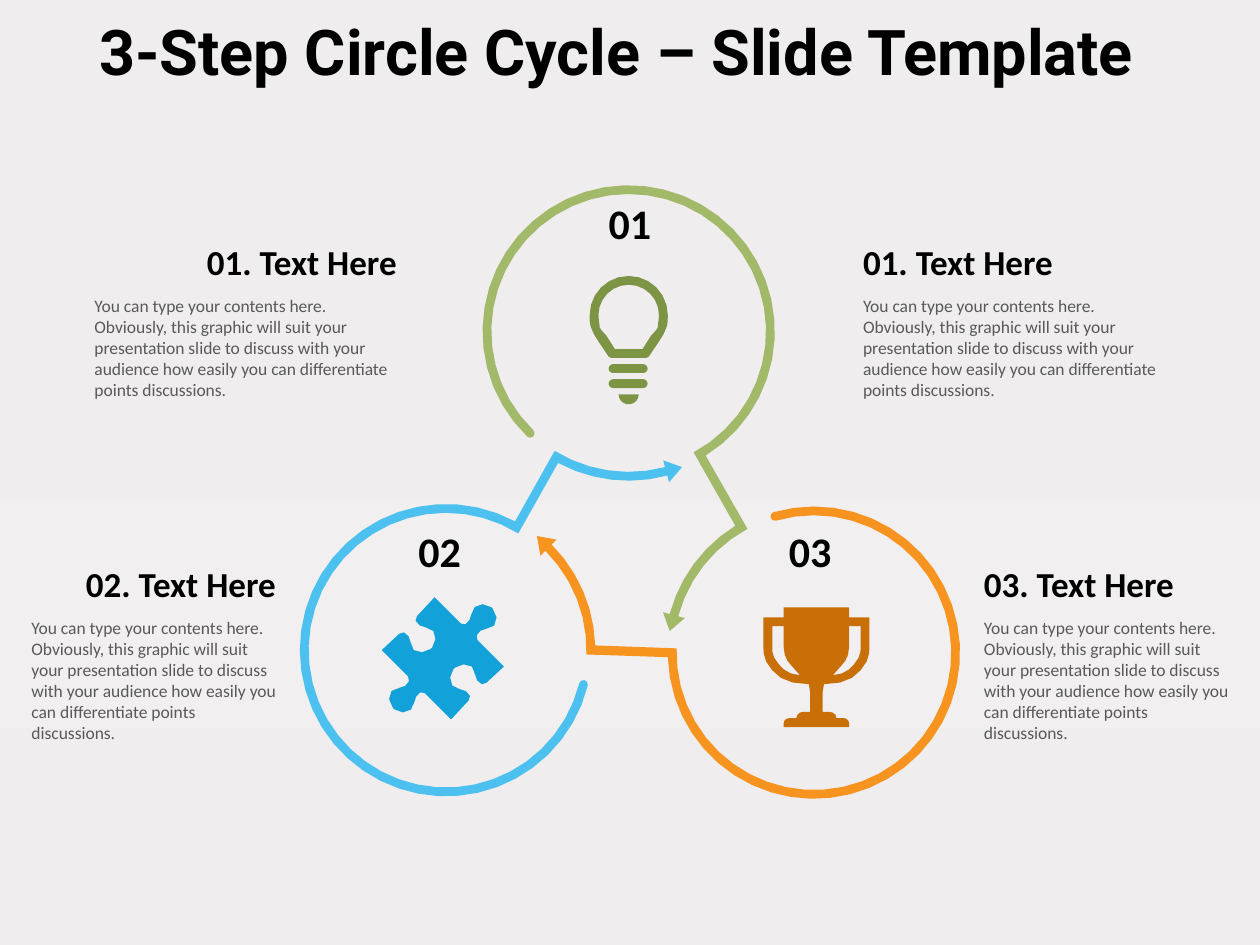
from math import ceil, cos, sin, radians, degrees
from lxml import etree
from pptx import Presentation
from pptx.dml.color import RGBColor
from pptx.enum.shapes import MSO_SHAPE
from pptx.enum.text import MSO_ANCHOR, MSO_AUTO_SIZE, PP_ALIGN
from pptx.oxml.ns import qn
from pptx.util import Inches, Pt

TOP, MIDDLE, BOTTOM = MSO_ANCHOR.TOP, MSO_ANCHOR.MIDDLE, MSO_ANCHOR.BOTTOM
LEFT, CENTER, RIGHT = PP_ALIGN.LEFT, PP_ALIGN.CENTER, PP_ALIGN.RIGHT
PILL = MSO_SHAPE.ROUNDED_RECTANGLE

# Content
TITLE = "3-Step Circle Cycle – Slide Template"
BODY = ("You can type your contents here. Obviously, this graphic will suit your "
        "presentation slide to discuss with your audience how easily you can "
        "differentiate points discussions.")
# heading, left, top, width, body height, heading alignment
NOTES = [
    ("03. Text Here", 7.81, 4.41, 1.94, 1.11, LEFT),
    ("02. Text Here", 0.25, 4.41, 1.94, 1.11, RIGHT),
    ("01. Text Here", 6.85, 1.85, 2.4, 0.94, LEFT),
    ("01. Text Here", 0.75, 1.85, 2.4, 0.94, RIGHT),
]
# centre, colour, turn in degrees, next step, number, number position
STEPS = {
    "blue": ((3.54, 5.16), "4CC1EF", -120, "green", "02", (3.29, 4.12)),
    "green": ((4.99, 2.63), "A2B969", 0, "orange", "01", (4.8, 1.52)),
    "orange": ((6.46, 5.18), "F7931F", 120, "blue", "03", (6.23, 4.12)),
}
BACKGROUND = [(0, "EFEDEE"), (53, "F1EFF0"), (77, "EFEDEE"), (100, "EFEBEC")]
BULB, PUZZLE, TROPHY = "7E9445", "13A1D9", "C96F07"

RING_RADIUS, HOOK_RADIUS, HALF_BAND = 1.125, 1.15, 0.035
ARROW_LENGTH, ARROW_HALF = 0.13, 0.09
ARC_STEP, CURVE_STEPS = 8, 3

# Icon outlines: pairs are corners, six values are a cubic curve
PUZZLE_CENTER = (3.515, 5.225)
PUZZLE_HALF = [
    (3.58, 5.71), (3.72, 5.56), (3.76, 5.53, 3.7, 5.47, 3.65, 5.47),
    (3.57, 5.47, 3.55, 5.37, 3.6, 5.31), (3.61, 5.3),
    (3.67, 5.25, 3.78, 5.27, 3.77, 5.35), (3.77, 5.4, 3.83, 5.46, 3.86, 5.42),
    (4, 5.29), (3.79, 5.08), (3.76, 5.05, 3.81, 4.99, 3.86, 4.99),
    (3.94, 5, 3.97, 4.89, 3.91, 4.83), (3.9, 4.82),
    (3.84, 4.77, 3.74, 4.8, 3.74, 4.88), (3.74, 4.92, 3.69, 4.98, 3.66, 4.95),
]
TROPHY_AXIS = 6.48
TROPHY_HALF = [
    (6.74, 4.82), (6.74, 4.9), (6.9, 4.9), (6.9, 5.15),
    (6.9, 5.17, 6.9, 5.25, 6.83, 5.32), (6.77, 5.39, 6.69, 5.43, 6.54, 5.43),
    (6.53, 5.49), (6.53, 5.65), (6.59, 5.65),
    (6.61, 5.65, 6.64, 5.67, 6.64, 5.7), (6.7, 5.7),
    (6.72, 5.7, 6.74, 5.72, 6.74, 5.74), (6.74, 5.77),
]
TROPHY_HANDLE = [
    (6.74, 4.97), (6.83, 4.97), (6.83, 5.16), (6.83, 5.16, 6.83, 5.22, 6.78, 5.27),
    (6.74, 5.32, 6.7, 5.35, 6.61, 5.36), (6.68, 5.28),
    (6.71, 5.25, 6.74, 5.21, 6.74, 5.13),
]
BULB_CENTER = (4.99, 2.5)
BULB_OUTER = [(5.3, 2.55, 5.3, 2.59, 5.28, 2.62),
              (5.27, 2.65, 5.25, 2.68, 5.23, 2.71), (5.15, 2.83), (5.13, 2.84)]
BULB_INNER = [(5.23, 2.54, 5.22, 2.57, 5.22, 2.6),
              (5.21, 2.62, 5.19, 2.64, 5.17, 2.66), (5.1, 2.77)]


def rgb(color):
    return RGBColor.from_string(color)


def polar(center, radius, angle):
    turn = radians(angle)
    return center[0] + radius * cos(turn), center[1] + radius * sin(turn)


def arc(center, radius, start, end, step=ARC_STEP):
    count = ceil(abs(end - start) / step)
    return [polar(center, radius, start + (end - start) * i / count)
            for i in range(count + 1)]


def trace(outline):
    points = []
    for part in outline:
        if len(part) == 2:
            points.append(part)
            continue
        anchors = [points[-1], part[:2], part[2:4], part[4:]]
        for i in range(1, CURVE_STEPS + 1):
            t = i / CURVE_STEPS
            weights = ((1 - t) ** 3, 3 * t * (1 - t) ** 2, 3 * t * t * (1 - t), t ** 3)
            points.append(tuple(sum(w * a[axis] for w, a in zip(weights, anchors))
                                for axis in (0, 1)))
    return points


def mirror(points, axis):
    return [(2 * axis - x, y) for x, y in reversed(points)]


def paint(shape, color):
    shape.shadow.inherit = False
    shape.fill.solid()
    shape.fill.fore_color.rgb = rgb(color)
    shape.line.fill.background()


def draw(slide, color, *contours):
    contours = [[(Inches(x), Inches(y)) for x, y in points] for points in contours]
    builder = slide.shapes.build_freeform(*contours[0][0], scale=1.0)
    for index, points in enumerate(contours):
        if index:
            builder.move_to(*points[0])
        builder.add_line_segments(points[1:], close=True)
    paint(builder.convert_to_shape(), color)


def write(slide, text, box, size, color="000000", bold=True, align=LEFT,
          anchor=TOP, font="Calibri", inset=0, spacing=None, grow=True):
    frame = slide.shapes.add_textbox(*map(Inches, box)).text_frame
    frame.word_wrap = True
    frame.auto_size = MSO_AUTO_SIZE.SHAPE_TO_FIT_TEXT if grow else MSO_AUTO_SIZE.NONE
    frame.vertical_anchor = anchor
    frame.margin_left, frame.margin_right = Inches(inset), 0
    frame.text = text
    paragraph = frame.paragraphs[0]
    paragraph.alignment = align
    paragraph.line_spacing = spacing
    style = paragraph.runs[0].font
    style.name, style.size, style.bold = font, Pt(size), bold
    style.color.rgb = rgb(color)


def band(center, target, turn):
    """Ring, radial link and hook with an arrowhead, as one outline."""
    start, leave, enter, end = (a + turn for a in (134, 420, 240, 195))
    inner, outer = RING_RADIUS - HALF_BAND, RING_RADIUS + HALF_BAND
    near, far = HOOK_RADIUS - HALF_BAND, HOOK_RADIUS + HALF_BAND
    nudge = degrees(HALF_BAND / RING_RADIUS)
    base = polar(target, HOOK_RADIUS, end)
    # The left side of the link meets the hook's inner edge
    return (arc(polar(center, RING_RADIUS, start), HALF_BAND, start - 180, start, 45)
            + arc(center, outer, start, leave - nudge)
            + arc(target, near, enter + nudge, end)
            + [polar(base, ARROW_HALF, end + 180), polar(base, ARROW_LENGTH, end - 90),
               polar(base, ARROW_HALF, end)]
            + arc(target, far, end, enter - nudge)
            + arc(center, inner, leave + nudge, start))


prs = Presentation()
prs.slide_width, prs.slide_height = Inches(10), Inches(7.5)
slide = prs.slides.add_slide(prs.slide_layouts[6])

# Background gradient
fill = slide.background.fill
fill.gradient()
fill.gradient_angle = 270
stops = slide.element.find(".//" + qn("a:gsLst"))
for stop in list(stops):
    stops.remove(stop)
for position, color in BACKGROUND:
    stop = etree.SubElement(stops, qn("a:gs"), pos=str(position * 1000))
    etree.SubElement(stop, qn("a:srgbClr"), val=color)

# Title and notes
write(slide, TITLE, (0.69, 0.12, 9.31, 0.81), 36, font="Roboto", inset=0.1,
      spacing=0.9, grow=False)
for heading, left, top, width, height, align in NOTES:
    write(slide, heading, (left, top, width, 0.44), 20, align=align, anchor=BOTTOM)
    write(slide, BODY, (left, top + 0.44, width, height), 10, "595959", bold=False)

# Cycle bands, then their numbers
for center, color, turn, following, *_ in STEPS.values():
    draw(slide, color, band(center, STEPS[following][0], turn))
for *_, number, place in STEPS.values():
    write(slide, number, (*place, 0.4, 0.5), 24, align=CENTER, anchor=MIDDLE)

# Light bulb
for top in (2.89, 3.01):
    bar = slide.shapes.add_shape(PILL, *map(Inches, (4.83, top, 0.31, 0.07)))
    bar.adjustments[0] = 0.5
    paint(bar, BULB)
draw(slide, BULB, arc((4.99, 3.13), 0.08, 0, 180, 20))
glass = []
for radius, side in ((0.31, BULB_OUTER), (0.24, BULB_INNER)):
    half = trace(arc(BULB_CENTER, radius, 270, 360, 15) + side)
    glass.append(half + mirror(half, BULB_CENTER[0]))
draw(slide, BULB, *glass)

# Puzzle piece: one half, and the same half turned around
half = trace(PUZZLE_HALF)
draw(slide, PUZZLE, half + [(2 * PUZZLE_CENTER[0] - x, 2 * PUZZLE_CENTER[1] - y)
                            for x, y in half])

# Trophy
half, handle = trace(TROPHY_HALF), trace(TROPHY_HANDLE)
draw(slide, TROPHY, half + mirror(half, TROPHY_AXIS), handle, mirror(handle, TROPHY_AXIS))

prs.save("out.pptx")
